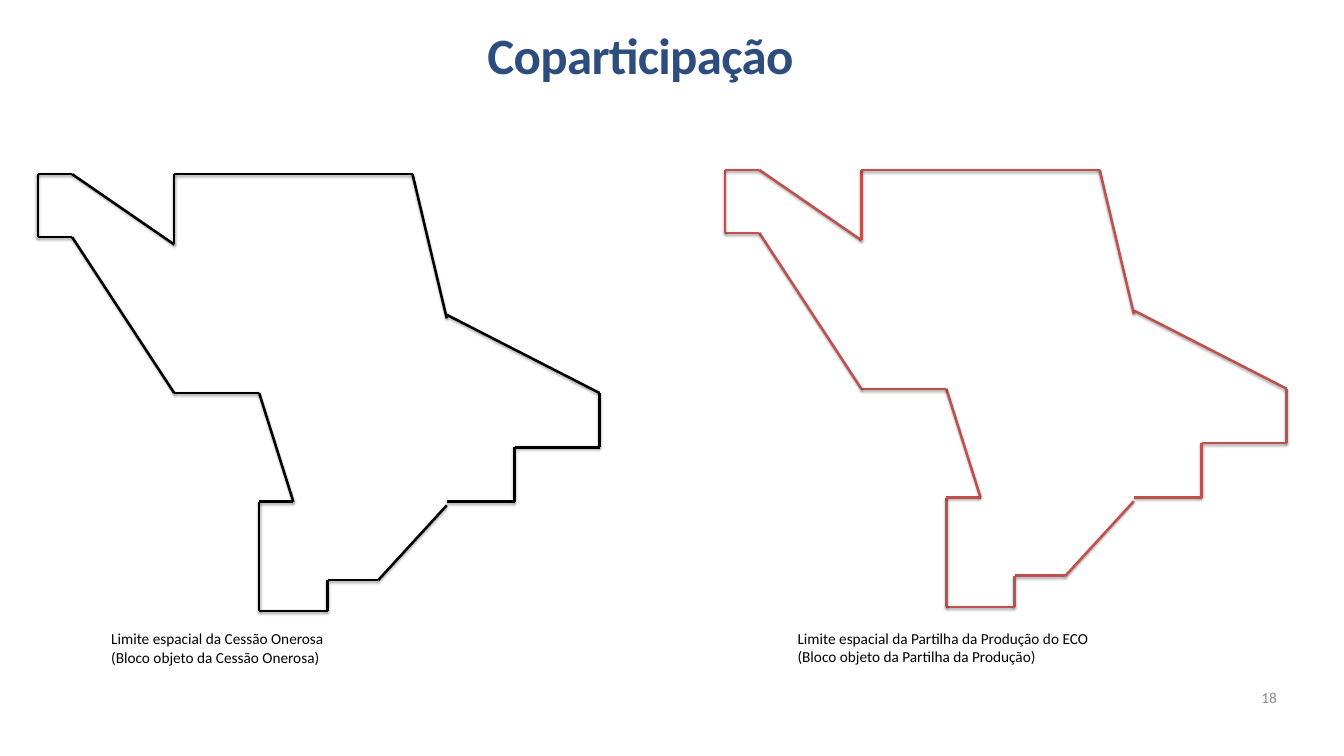
from itertools import pairwise

from pptx import Presentation
from pptx.dml.color import RGBColor
from pptx.enum.shapes import MSO_CONNECTOR as CONN
from pptx.enum.text import MSO_ANCHOR as ANCHOR, MSO_AUTO_SIZE as FIT, PP_ALIGN as ALIGN
from pptx.oxml import parse_xml
from pptx.oxml.ns import nsdecls
from pptx.util import Pt

COLORS = {
    "title": "2D4D7E",
    "text": "000000",
    "number": "8C8C8C",
    "onerosa": "000000",
    "partilha": "C0504D",
}

SHADOW = (
    f'<a:effectLst {nsdecls("a")}>'
    '<a:outerShdw blurRad="39370" dist="22860" dir="5400000" rotWithShape="0">'
    '<a:srgbClr val="000000"><a:alpha val="35000"/></a:srgbClr>'
    '</a:outerShdw></a:effectLst>'
)

EAST_EDGE = [
    (526.3, 370.8), (706.3, 463), (706.3, 527), (606.2, 527),
    (606.2, 591.1), (526.3, 591.1),
]
WEST_EDGE = [
    (526.3, 595.4), (445.7, 683.3), (385.9, 683.3), (385.9, 720),
    (305.3, 720), (305.3, 591.1), (345.6, 591.1), (305.3, 463),
    (205.2, 463), (85, 279.4), (44.6, 279.4), (44.6, 205.2),
    (85, 205.2), (205.2, 288), (205.2, 205.2), (486, 205.2),
    (526.3, 375.1),
]


class Deck:
    font = "Calibri"
    line_width = 3

    def __init__(self, width, height):
        self.prs = Presentation()
        self.prs.slide_width, self.prs.slide_height = Pt(width), Pt(height)
        self.s = self.prs.slides.add_slide(self.prs.slide_layouts[5])

    def set_text(self, sp, lines, color, insets, font, para):
        tf = sp.text_frame
        left, top, right, bottom = map(Pt, insets)
        frame = {
            "word_wrap": True,
            "auto_size": FIT.SHAPE_TO_FIT_TEXT,
            "vertical_anchor": ANCHOR.TOP,
            "margin_left": left,
            "margin_top": top,
            "margin_right": right,
            "margin_bottom": bottom,
        }
        for name, value in frame.items():
            setattr(tf, name, value)
        for i, line in enumerate(lines):
            p = tf.add_paragraph() if i else tf.paragraphs[0]
            for name, value in para.items():
                setattr(p, name, value)
            r = p.add_run()
            r.text = line
            for name, value in {"name": self.font, **font}.items():
                setattr(r.font, name, value)
            r.font.color.rgb = RGBColor.from_string(COLORS[color])

    def title(self, text, left, top, width, height):
        sp = self.s.shapes.title
        place = {"left": left, "top": top, "width": width, "height": height}
        for name, value in place.items():
            setattr(sp, name, Pt(value))
        font = {"size": Pt(60), "bold": True}
        para = {"alignment": ALIGN.CENTER, "line_spacing": 0.73, "space_before": Pt(22.4)}
        self.set_text(sp, [text], "title", (0, 22.3, 0, 0), font, para)
        r = sp.text_frame.paragraphs[0].runs[0]
        r._r.get_or_add_rPr().set("spc", "-80")

    def text(self, lines, left, top, width, height, color="text",
             insets=(14.4, 7.2, 14.4, 7.2), align=ALIGN.LEFT):
        sp = self.s.shapes.add_textbox(Pt(left), Pt(top), Pt(width), Pt(height))
        self.set_text(sp, lines, color, insets, {"size": Pt(18)}, {"alignment": align})

    def outline(self, chains, color, dx=0, dy=0):
        group = self.s.shapes.add_group_shape()
        for chain in chains:
            for (x1, y1), (x2, y2) in pairwise(chain):
                c = group.shapes.add_connector(
                    CONN.STRAIGHT, Pt(x1 + dx), Pt(y1 + dy), Pt(x2 + dx), Pt(y2 + dy))
                c.line.width = Pt(self.line_width)
                c.line.color.rgb = RGBColor.from_string(COLORS[color])
                c._element.spPr.append(parse_xml(SHADOW))

    def save(self):
        self.prs.save("out.pptx")


def main():
    deck = Deck(1583.3, 890.6)
    deck.title("Coparticipação", 193.7, 23, 1121.8, 78.5)
    deck.text(["18"], 1134.7, 810.7, 369.4, 21.6, "number", (0, 0, 0, 0), ALIGN.RIGHT)
    blocks = [
        ("onerosa", 0, 0, 116.6, 734.4,
         ["Limite espacial da Cessão Onerosa", "(Bloco objeto da Cessão Onerosa)"]),
        ("partilha", 809.5, -5, 925.2, 733.7,
         ["Limite espacial da Partilha da Produção do ECO",
          "(Bloco objeto da Partilha da Produção)"]),
    ]
    for color, dx, dy, left, top, caption in blocks:
        deck.outline([EAST_EDGE, WEST_EDGE], color, dx, dy)
        deck.text(caption, left, top, 537.8, 57.6)
    deck.save()


if __name__ == "__main__":
    main()
